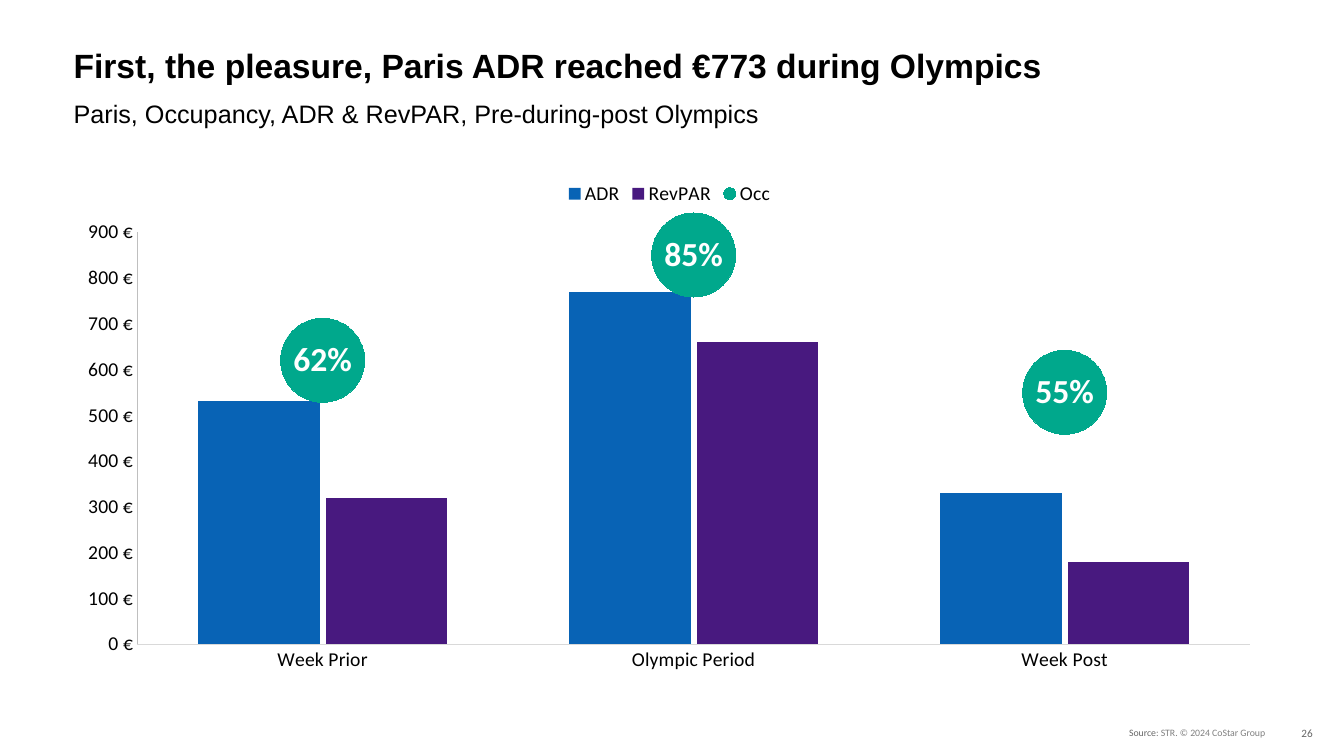
from lxml.etree import SubElement
from pptx import Presentation
from pptx.chart.data import CategoryChartData
from pptx.dml.color import RGBColor
from pptx.enum.chart import (XL_CHART_TYPE, XL_LABEL_POSITION, XL_LEGEND_POSITION,
                             XL_MARKER_STYLE, XL_TICK_MARK)
from pptx.enum.text import MSO_ANCHOR
from pptx.oxml import parse_xml
from pptx.oxml.ns import nsdecls, qn
from pptx.util import Inches, Pt

BLACK = RGBColor(0, 0, 0)
WHITE = RGBColor(255, 255, 255)
BLUE = RGBColor(0x08, 0x63, 0xB5)
PURPLE = RGBColor(0x48, 0x19, 0x7F)
GREEN = RGBColor(0x00, 0xA8, 0x8C)
DARK_GREY = RGBColor(0x66, 0x66, 0x66)
GREY = RGBColor(0x80, 0x80, 0x80)
AXIS_GREY = RGBColor(0xBF, 0xBF, 0xBF)
BASE_GREY = RGBColor(0xD9, 0xD9, 0xD9)

TITLE = "First, the pleasure, Paris ADR reached €773 during Olympics"
SUBTITLE = "Paris, Occupancy, ADR & RevPAR, Pre-during-post Olympics"
PERIODS = ["Week Prior", "Olympic Period", "Week Post"]
MEASURES = [("ADR", (530, 770, 330), BLUE), ("RevPAR", (320, 660, 180), PURPLE),
            ("Occ", (0.62, 0.85, 0.55), GREEN)]
HEADINGS = [
    (TITLE, (0.63, 0.47, 11.32, 0.38), MSO_ANCHOR.MIDDLE,
     {"name": "Arial", "size": Pt(24), "bold": True}),
    (SUBTITLE, (0.63, 0.85, 12.01, 0.34), MSO_ANCHOR.TOP,
     {"name": "Arial", "size": Pt(18), "bold": False}),
]
FOOTERS = [
    ((11.1, 7.16, 1.63, 0.22), MSO_ANCHOR.TOP, 7,
     [("Source", DARK_GREY), (": STR. © 2024 CoStar Group", GREY)]),
    ((12.81, 7.17, 0.43, 0.2), MSO_ANCHOR.MIDDLE, 8, [("26", DARK_GREY)]),
]
CHART_AREA = (0.64, 1.69, 12, 5.11)
PLOT_AREA = {"x": 0.06, "y": 0.12, "w": 0.92, "h": 0.8}
CHART_FONT = {"name": "Calibri", "size": Pt(14)}
LABEL_FONT = {"name": "Calibri", "size": Pt(24), "bold": True}

OCCUPANCY_AXES = f"""<c:axes {nsdecls('c', 'a')}>
<c:valAx><c:axId val="3002"/><c:scaling><c:orientation val="minMax"/><c:max val="0.9"/>
<c:min val="0"/></c:scaling><c:delete val="0"/><c:axPos val="r"/>
<c:numFmt formatCode="0%" sourceLinked="0"/><c:majorTickMark val="out"/>
<c:minorTickMark val="none"/><c:tickLblPos val="none"/>
<c:spPr><a:ln><a:noFill/></a:ln></c:spPr>
<c:crossAx val="3001"/><c:crosses val="max"/></c:valAx>
<c:catAx><c:axId val="3001"/><c:scaling><c:orientation val="minMax"/></c:scaling>
<c:delete val="1"/><c:axPos val="b"/><c:majorTickMark val="none"/>
<c:minorTickMark val="none"/><c:tickLblPos val="nextTo"/>
<c:crossAx val="3002"/><c:crosses val="autoZero"/></c:catAx></c:axes>"""


def style_font(font, values, color):
    """Apply a dict of font values and a colour."""
    for name, value in values.items():
        setattr(font, name, value)
    font.color.rgb = color


def place(shape, area):
    """Move and size a shape in inches."""
    for name, value in zip(("left", "top", "width", "height"), area):
        setattr(shape, name, Inches(value))


def fill_heading(box, text, area, anchor, font):
    """Write one heading into a template placeholder."""
    place(box, area)
    frame = box.text_frame
    frame.text = text
    frame.word_wrap = True
    frame.vertical_anchor = anchor
    para = frame.paragraphs[0]
    properties = para._p.get_or_add_pPr()
    for name, value in {"marL": "0", "indent": "0", "algn": "l"}.items():
        properties.set(name, value)
    SubElement(properties, qn("a:buNone"))
    para.line_spacing = Pt(26.7)
    para.space_before = Pt(0)
    style_font(para.runs[0].font, font, BLACK)


def add_footer(slide, area, anchor, size, spans):
    """Add a small footer text."""
    frame = slide.shapes.add_textbox(*map(Inches, area)).text_frame
    frame.word_wrap = True
    frame.vertical_anchor = anchor
    for text, color in spans:
        span = frame.paragraphs[0].add_run()
        span.text = text
        style_font(span.font, {"name": "Calibri", "size": Pt(size)}, color)


def move_occupancy_to_line(chart):
    """Turn the last column series into a line on a second axis."""
    plot_area = chart._chartSpace.chart.plotArea
    columns = plot_area.find(qn("c:barChart"))
    occupancy = columns.findall(qn("c:ser"))[-1]
    for setting in occupancy.findall(qn("c:invertIfNegative")):
        occupancy.remove(setting)
    line = parse_xml(f'<c:lineChart {nsdecls("c")}><c:grouping val="standard"/>'
                     '<c:varyColors val="0"/><c:marker val="1"/><c:axId val="3001"/>'
                     '<c:axId val="3002"/></c:lineChart>')
    line.insert(2, occupancy)
    columns.addnext(line)
    last_axis = plot_area.findall(qn("c:valAx"))[-1]
    for axis in reversed(list(parse_xml(OCCUPANCY_AXES))):
        last_axis.addnext(axis)


def set_plot_area(chart):
    """Fix the inner plot area as shares of the chart."""
    plot_area = chart._chartSpace.chart.plotArea
    for layout in plot_area.findall(qn("c:layout")):
        plot_area.remove(layout)
    layout = parse_xml(f'<c:layout {nsdecls("c")}><c:manualLayout/></c:layout>')
    settings = {"layoutTarget": "inner", "xMode": "edge", "yMode": "edge", **PLOT_AREA}
    for name, value in settings.items():
        SubElement(layout[0], qn(f"c:{name}")).set("val", str(value))
    plot_area.insert(0, layout)


def add_hotel_chart(slide):
    """Add columns for rates and round markers for occupancy."""
    data = CategoryChartData()
    data.categories = PERIODS
    for name, values, _ in MEASURES:
        data.add_series(name, values)
    chart = slide.shapes.add_chart(XL_CHART_TYPE.COLUMN_CLUSTERED,
                                   *map(Inches, CHART_AREA), data).chart
    style_font(chart.font, CHART_FONT, BLACK)
    chart.has_title = False
    chart.has_legend = True
    chart.legend.position = XL_LEGEND_POSITION.TOP
    chart.legend.include_in_layout = False
    style_font(chart.legend.font, CHART_FONT, BLACK)

    rates = chart.value_axis
    rates.minimum_scale, rates.maximum_scale, rates.major_unit = 0, 900, 100
    rates.has_major_gridlines = False
    rates.tick_labels.number_format = "#,##0\\ [$€-40C]"
    rates.tick_labels.number_format_is_linked = False
    for axis, color in ((chart.category_axis, BASE_GREY), (rates, AXIS_GREY)):
        axis.major_tick_mark = XL_TICK_MARK.NONE
        axis.format.line.color.rgb = color
        axis.format.line.width = Pt(0.75)
        style_font(axis.tick_labels.font, CHART_FONT, BLACK)

    move_occupancy_to_line(chart)
    set_plot_area(chart)
    columns, markers = chart.plots
    columns.gap_width, columns.overlap = 100, -5
    columns.vary_by_categories = False
    for series, (_, _, color) in zip(columns.series, MEASURES):
        series.format.fill.solid()
        series.format.fill.fore_color.rgb = color

    occupancy = markers.series[0]
    occupancy.smooth = False
    occupancy.format.line.fill.background()
    occupancy.marker.style = XL_MARKER_STYLE.CIRCLE
    occupancy.marker.size = 60
    occupancy.marker.format.fill.solid()
    occupancy.marker.format.fill.fore_color.rgb = GREEN
    occupancy.marker.format.line.fill.background()
    labels = occupancy.data_labels
    labels.show_value = True
    labels.number_format = "0%"
    labels.number_format_is_linked = False
    labels.position = XL_LABEL_POSITION.CENTER
    style_font(labels.font, LABEL_FONT, WHITE)


def main():
    """Build the slide and save it."""
    deck = Presentation()
    deck.slide_width, deck.slide_height = Inches(13.33), Inches(7.5)
    slide = deck.slides.add_slide(deck.slide_layouts[1])
    for footer in FOOTERS:
        add_footer(slide, *footer)
    add_hotel_chart(slide)
    for box, heading in zip(slide.placeholders, HEADINGS):
        fill_heading(box, *heading)
    deck.save("out.pptx")


if __name__ == "__main__":
    main()
